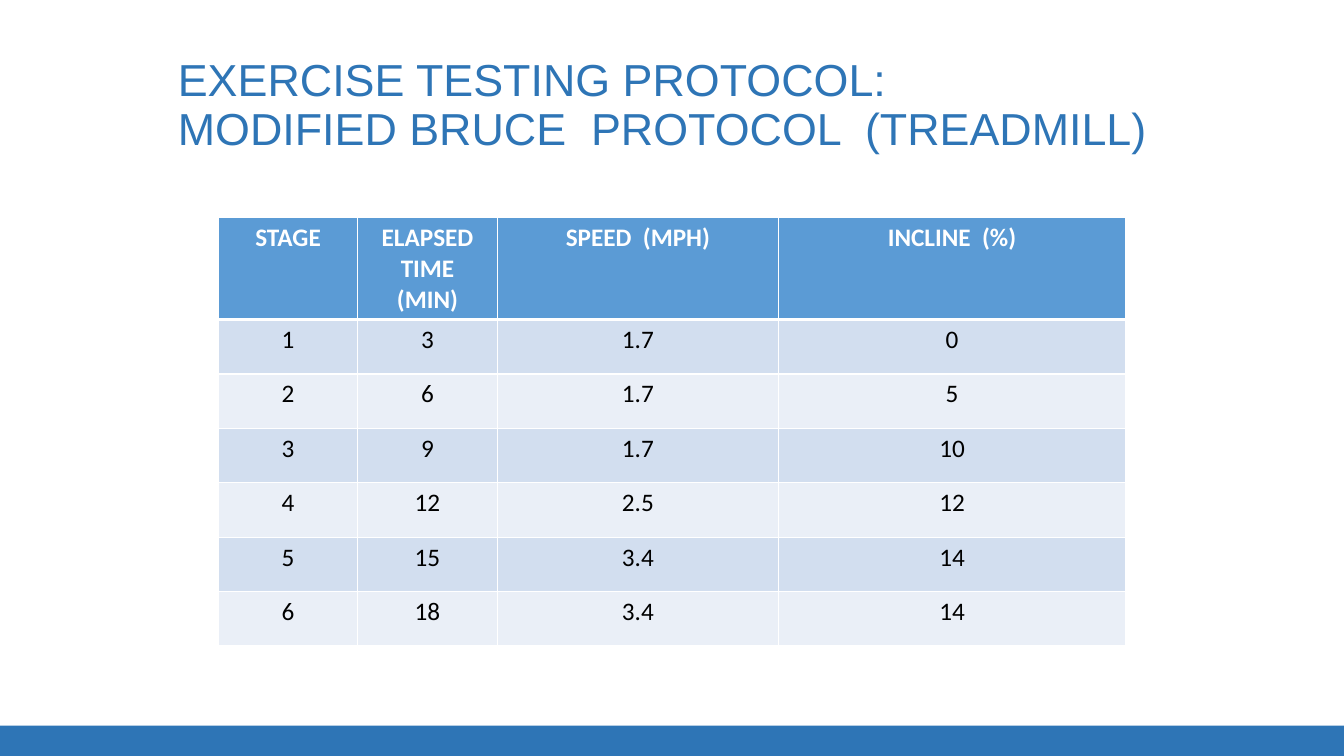
from pptx import Presentation
from pptx.dml.color import RGBColor
from pptx.enum.shapes import MSO_SHAPE
from pptx.enum.text import MSO_ANCHOR, PP_ALIGN
from pptx.oxml import parse_xml
from pptx.oxml.ns import nsdecls
from pptx.util import Inches, Pt

RECTANGLE = MSO_SHAPE.RECTANGLE
MIDDLE = MSO_ANCHOR.MIDDLE
CENTER = PP_ALIGN.CENTER

HEADINGS = ["STAGE", "ELAPSED TIME (MIN)", "SPEED  (MPH)", "INCLINE  (%)"]
STAGES = [
    ("1", "3", "1.7", "0"),
    ("2", "6", "1.7", "5"),
    ("3", "9", "1.7", "10"),
    ("4", "12", "2.5", "12"),
    ("5", "15", "3.4", "14"),
    ("6", "18", "3.4", "14"),
]


def color(hex_code):
    return RGBColor.from_string(hex_code)


class ProtocolSlide:
    GRID_COLUMNS, GRID_ROWS = 80, 45
    ACCENT, HEADER, WHITE, BLACK = "2E75B6", "5B9BD5", "FFFFFF", "000000"
    BANDS = ("D2DEEF", "EAEFF7")
    TITLE_FONT, TABLE_FONT = "Arial", "Calibri"

    def __init__(self, deck):
        self.column = deck.slide_width / self.GRID_COLUMNS
        self.row = deck.slide_height / self.GRID_ROWS
        self.shapes = deck.slides.add_slide(deck.slide_layouts[6]).shapes

    def across(self, columns):
        return round(columns * self.column)

    def down(self, rows):
        return round(rows * self.row)

    def place(self, left, top, width, height):
        return (self.across(left), self.down(top),
                self.across(width), self.down(height))

    def style(self, paragraph, font_name, size, hex_code, bold=False):
        font = paragraph.font
        font.name, font.size, font.bold = font_name, Pt(size), bold
        font.color.rgb = color(hex_code)

    def band(self, *area):
        footer = self.shapes.add_shape(RECTANGLE, *self.place(*area))
        footer.shadow.inherit = False
        footer.fill.solid()
        footer.fill.fore_color.rgb = color(self.ACCENT)
        footer.line.fill.background()

    def title(self, text, *area):
        frame = self.shapes.add_textbox(*self.place(*area)).text_frame
        frame.word_wrap = True
        frame.vertical_anchor = MIDDLE
        frame.margin_bottom = Inches(0.19)
        heading = frame.paragraphs[0]
        heading.text = text
        heading.line_spacing = 0.92
        self.style(heading, self.TITLE_FONT, 32, self.ACCENT)

    def borders(self, cell, top, bottom):
        properties = cell._tc.get_or_add_tcPr()
        widths = {"L": 1, "R": 1, "T": top, "B": bottom}
        for position, (side, width) in enumerate(widths.items()):
            properties.insert(position, parse_xml(
                f'<a:ln{side} {nsdecls("a")} w="{Pt(width)}"><a:solidFill>'
                f'<a:srgbClr val="{self.WHITE}"/></a:solidFill></a:ln{side}>'))

    def cell(self, cell, text, row_number):
        is_header = row_number == 0
        cell.text = text
        entry = cell.text_frame.paragraphs[0]
        entry.alignment = CENTER
        self.style(entry, self.TABLE_FONT, 18,
                   self.WHITE if is_header else self.BLACK, is_header)
        cell.fill.solid()
        cell.fill.fore_color.rgb = color(
            self.HEADER if is_header else self.BANDS[(row_number - 1) % 2])
        self.borders(cell, 3 if row_number == 1 else 1, 3 if is_header else 1)

    def table(self, records, left, top, widths, heights):
        area = self.place(left, top, sum(widths), sum(heights))
        grid = self.shapes.add_table(len(heights), len(widths), *area).table
        for column, width in zip(grid.columns, widths):
            column.width = self.across(width)
        for row_number, (record, height) in enumerate(zip(records, heights)):
            grid.rows[row_number].height = self.down(height)
            for column_number, text in enumerate(record):
                self.cell(grid.cell(row_number, column_number), text, row_number)


def main():
    deck = Presentation()
    deck.slide_width, deck.slide_height = Inches(13.33), Inches(7.5)
    slide = ProtocolSlide(deck)
    slide.band(0, 43.2, 80, 1.8)
    slide.title("EXERCISE TESTING PROTOCOL:\v"
                "MODIFIED BRUCE  PROTOCOL  (TREADMILL)", 10, 3, 60, 7.5)
    slide.table([HEADINGS, *STAGES], 13, 12.96,
                [8.3, 8.3, 16.75, 20.65], [6.06] + [3.24] * len(STAGES))
    deck.save("out.pptx")


if __name__ == "__main__":
    main()
